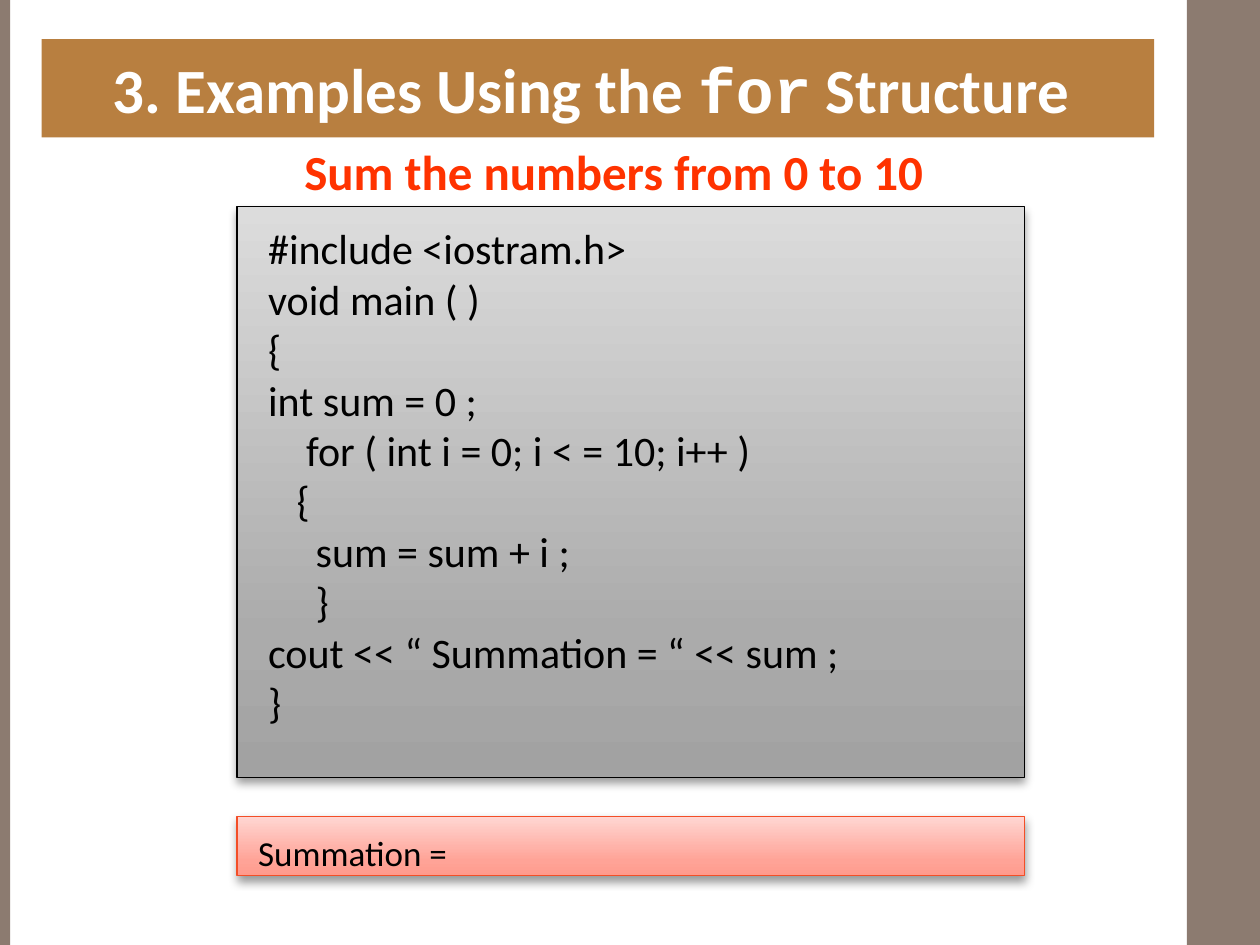
from lxml import etree
from pptx import Presentation
from pptx.dml.color import RGBColor
from pptx.enum.shapes import MSO_SHAPE
from pptx.enum.text import MSO_ANCHOR, PP_ALIGN
from pptx.oxml import parse_xml
from pptx.oxml.ns import nsdecls, qn
from pptx.util import Inches, Pt

WHITE = RGBColor(0xFF, 0xFF, 0xFF)
BLACK = RGBColor(0x00, 0x00, 0x00)
TAUPE = RGBColor(0x8C, 0x7B, 0x70)
BRONZE = RGBColor(0xB8, 0x7F, 0x40)
RED = RGBColor(0xFF, 0x33, 0x00)
ORANGE = RGBColor(0xF3, 0x4E, 0x27)
GREYS = [RGBColor(0xA2, 0xA2, 0xA2), RGBColor(0xAB, 0xAB, 0xAB), RGBColor(0xDC, 0xDC, 0xDC)]
PINKS = [RGBColor(0xFF, 0x9A, 0x8C), RGBColor(0xFF, 0xA3, 0x97), RGBColor(0xFF, 0xD6, 0xD2)]

CODE = """#include <iostram.h>
void main ( )
{
int sum = 0 ;
    for ( int i = 0; i < = 10; i++ )
   {
     sum = sum + i ;
     }
cout << “ Summation = “ << sum ;
}"""

presentation = Presentation()
presentation.slide_width = Inches(10)
presentation.slide_height = Inches(7.5)
slide = presentation.slides.add_slide(presentation.slide_layouts[6])


def add_rectangle(left, top, width, height, color=None):
    shape = slide.shapes.add_shape(
        MSO_SHAPE.RECTANGLE, Inches(left), Inches(top), Inches(width), Inches(height))
    shape.shadow.inherit = False
    if color is not None:
        shape.fill.solid()
        shape.fill.fore_color.rgb = color
        shape.line.fill.background()
    return shape


def add_text(left, top, width, height, lines, size, color, bold=False, align=PP_ALIGN.LEFT):
    box = slide.shapes.add_textbox(Inches(left), Inches(top), Inches(width), Inches(height))
    frame = box.text_frame
    frame.word_wrap = True
    frame.text = lines
    for paragraph in frame.paragraphs:
        paragraph.alignment = align
        paragraph.font.name = "Calibri"
        paragraph.font.size = Pt(size)
        paragraph.font.bold = bold
        paragraph.font.color.rgb = color
    return frame


# Side bands
add_rectangle(9.42, 0, 0.58, 7.5, TAUPE)
add_rectangle(0, 0, 0.08, 7.5, TAUPE)

# Title bar
title = add_rectangle(0.33, 0.31, 8.83, 0.78, BRONZE).text_frame
title.vertical_anchor = MSO_ANCHOR.MIDDLE
paragraph = title.paragraphs[0]
paragraph.alignment = PP_ALIGN.CENTER
paragraph.font.size = Pt(36)
paragraph.font.bold = True
paragraph.font.color.rgb = WHITE
for text, font_name in [("3. Examples Using the ", "Calibri"), ("for", "Courier New"),
                        (" Structure ", "Calibri")]:
    run = paragraph.add_run()
    run.text = text
    run.font.name = font_name

# Subtitle
subtitle = add_text(0.62, 1.02, 8.5, 0.68, "Sum the numbers from 0 to 10", 28, RED,
                    bold=True, align=PP_ALIGN.CENTER)
subtitle.vertical_anchor = MSO_ANCHOR.MIDDLE

# Code and output panels, with a gradient from bottom to top and a soft shadow
for top, height, colors, line_color in [(1.64, 4.53, GREYS, BLACK), (6.48, 0.47, PINKS, ORANGE)]:
    panel = add_rectangle(1.88, top, 6.25, height)
    panel.fill.gradient()
    panel.fill.gradient_angle = 90
    properties = panel._element.spPr
    stops = properties.find(".//" + qn("a:gsLst"))
    for stop in list(stops):
        stops.remove(stop)
    for position, color in zip((0, 25, 100), colors):
        stop = etree.SubElement(stops, qn("a:gs"), pos=str(position * 1000))
        etree.SubElement(stop, qn("a:srgbClr"), val=str(color))
    panel.line.color.rgb = line_color
    panel.line.width = Pt(0.75)
    properties.find(qn("a:effectLst")).append(parse_xml(
        f'<a:outerShdw {nsdecls("a")} blurRad="{Pt(5.2)}" dist="{Pt(3)}" dir="5400000" '
        'rotWithShape="0"><a:srgbClr val="000000"><a:alpha val="40000"/></a:srgbClr>'
        '</a:outerShdw>'))

# Program and its output
add_text(2.03, 1.72, 5.16, 4.14, CODE, 24, BLACK)
add_text(1.95, 6.55, 6.09, 0.44, "Summation =", 20, BLACK)

presentation.save("out.pptx")
